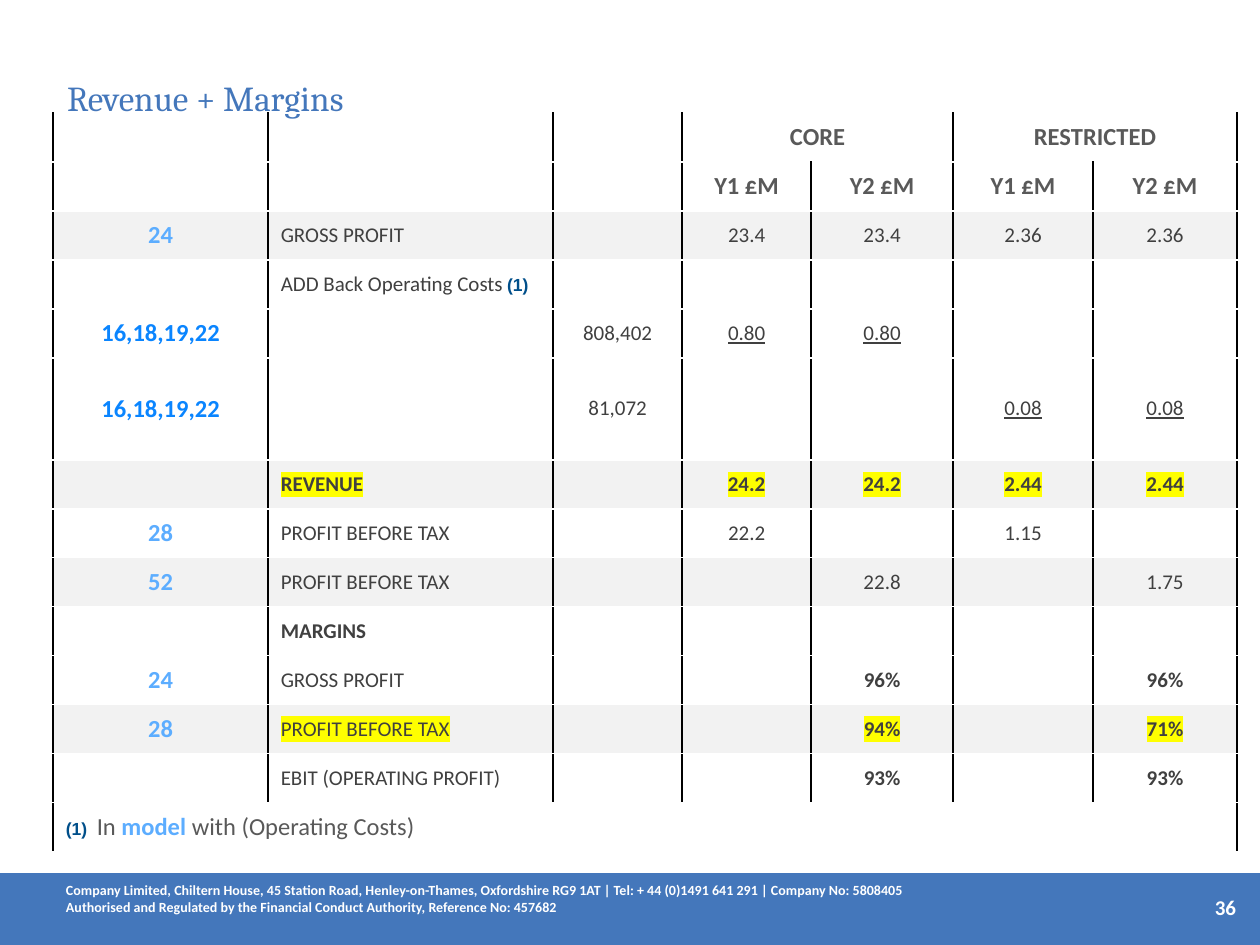
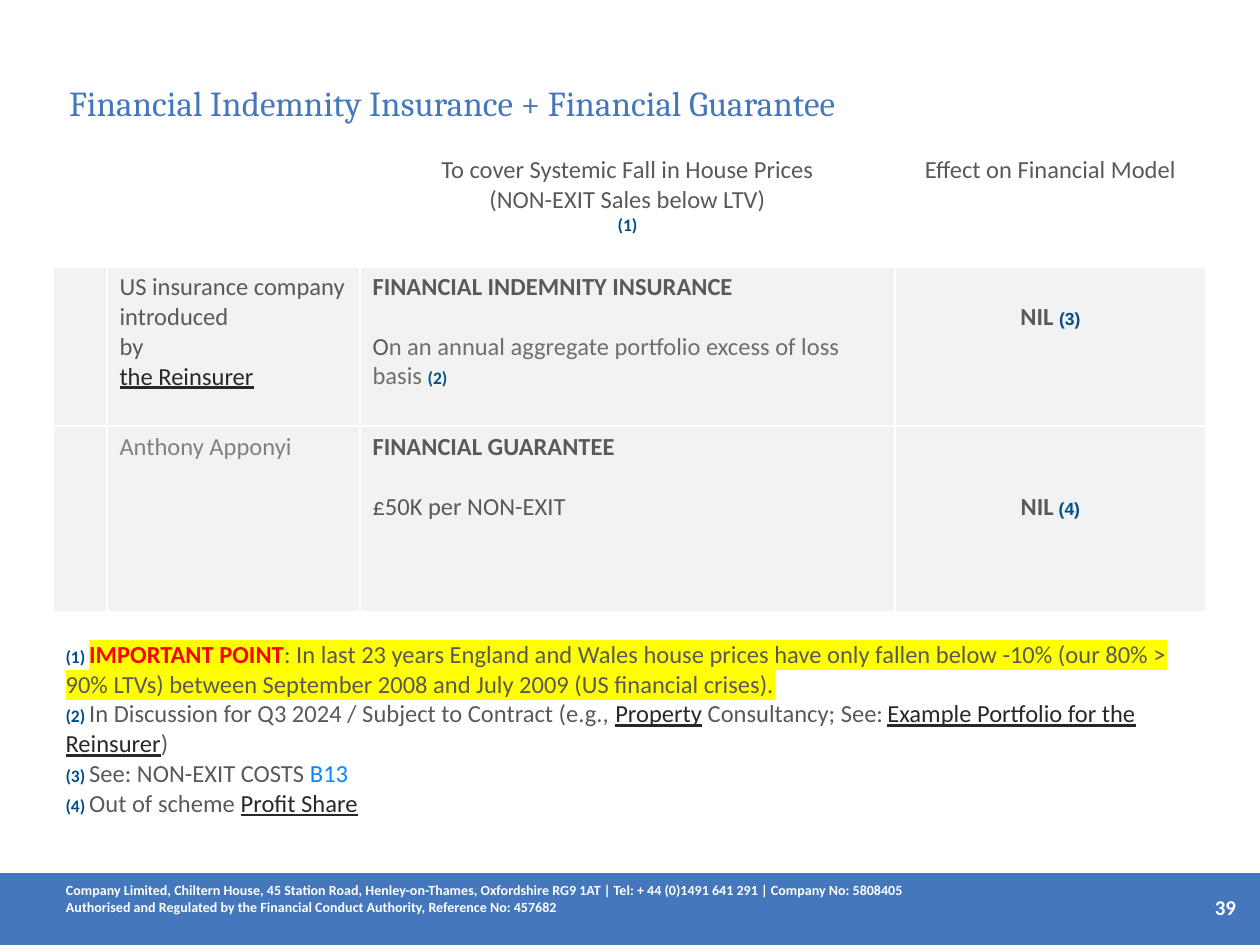
import dataclasses

import lxml.etree
import pptx
import pptx.dml.color
import pptx.enum.shapes
import pptx.enum.text
import pptx.oxml.ns
import pptx.util

ALIGN = pptx.enum.text.PP_ALIGN
ANCHOR = pptx.enum.text.MSO_ANCHOR
EMU_PER_PX = 914400 / 126


@dataclasses.dataclass(frozen=True)
class Style:
    size: int
    color: str
    bold: bool = False
    font: str = "Calibri"
    underline: bool = False
    highlight: str = ""


class Theme:
    blue = "4477BB"
    band = "F2F2F2"
    black = "000000"
    white = "FFFFFF"
    yellow = "FFFF00"
    gray = "595959"
    dark = "404040"
    link = "282828"
    navy = "004F8A"
    sky = "5CADFF"
    azure = "0A85FF"
    styles = {
        "title": Style(20, blue, font="Cambria"),
        "footer": Style(8, white, True),
        "page": Style(12, white, True),
        "head": Style(14, gray, True),
        "body": Style(14, gray),
        "light": Style(14, "6E6E6E"),
        "name": Style(14, "808080"),
        "link": Style(14, link, underline=True),
        "azure": Style(14, azure),
        "note": Style(10, navy, True),
        "note arial": Style(10, navy, True, "Arial"),
        "alert": Style(14, "FF0000", True, highlight=yellow),
        "marked body": Style(14, gray, highlight=yellow),
        "ref": Style(14, sky, True),
        "ref strong": Style(14, azure, True),
        "cell": Style(12, dark),
        "cell bold": Style(12, dark, True),
        "cell under": Style(12, dark, underline=True),
        "cell marked": Style(12, dark, highlight=yellow),
        "cell bold marked": Style(12, dark, True, highlight=yellow),
    }


FOOTER_LINES = (
    "Company Limited, Chiltern House, 45 Station Road, Henley-on-Thames, Oxfordshire RG9 1AT"
    " | Tel: + 44 (0)1491 641 291 | Company No: 5808405",
    "Authorised and Regulated by the Financial Conduct Authority, Reference No: 457682",
)

MARGIN_COLUMNS = (30, 215, 285, 129, 129, 142, 140, 144)
ROW_HEIGHT = 49
TALL_ROW, TALL_HEIGHT = 5, 102
HEADER_SPANS = ((0, 4, 5), (0, 6, 7), (13, 1, 7))
COSTS_LABEL = [("ADD Back Operating Costs", "cell"), (" ", "note"), ("(1)", "note arial")]
COSTS_FOOTNOTE = [("(1)  ", "note arial"), ("In ", "body"), ("model ", "ref"),
                  ("with (Operating Costs)", "body")]
MARGIN_ROWS = (
    (False, "ref", "cell", "head", ("", "", "", "CORE", "", "RESTRICTED", "")),
    (False, "ref", "cell", "head", ("", "", "", "Y1 £M", "Y2 £M", "Y1 £M", "Y2 £M")),
    (True, "ref", "cell", "cell", ("24", "GROSS PROFIT", "", "23.4", "23.4", "2.36", "2.36")),
    (False, "ref", "cell", "cell", ("", COSTS_LABEL, "", "", "", "", "")),
    (False, "ref strong", "cell", "cell under",
     ("16,18,19,22", "", [("808,402", "cell")], "0.80", "0.80", "", "")),
    (False, "ref strong", "cell", "cell under",
     ("16,18,19,22", "", [("81,072", "cell")], "", "", "0.08", "0.08")),
    (True, "ref", "cell bold marked", "cell bold marked",
     ("", "REVENUE", "", "24.2", "24.2", "2.44", "2.44")),
    (False, "ref", "cell", "cell", ("28", "PROFIT BEFORE TAX", "", "22.2", "", "1.15", "")),
    (True, "ref", "cell", "cell", ("52", "PROFIT BEFORE TAX", "", "", "22.8", "", "1.75")),
    (False, "ref", "cell bold", "cell", ("", "MARGINS", "", "", "", "", "")),
    (False, "ref", "cell", "cell bold", ("24", "GROSS PROFIT", "", "", "96%", "", "96%")),
    (True, "ref", "cell marked", "cell bold marked",
     ("28", "PROFIT BEFORE TAX", "", "", "94%", "", "71%")),
    (False, "ref", "cell", "cell bold",
     ("", "EBIT (OPERATING PROFIT)", "", "", "93%", "", "93%")),
    (False, "ref", "cell", "cell", (COSTS_FOOTNOTE, "", "", "", "", "", "")),
)

COVER_COLUMNS = (54, 253, 535, 311)
COVER_ROWS = (117, 160, 186, 258)
COVER_CELLS = {
    (0, 2): [[("To cover Systemic Fall in House Prices", "body")],
             [("(NON-EXIT Sales below LTV)", "body")],
             [("(1)", "note")]],
    (0, 3): [[("Effect on Financial Model", "body")]],
    (1, 1): [[("US insurance company introduced", "body")],
             [("by", "body")],
             [("the Reinsurer", "link")]],
    (1, 2): [[("FINANCIAL INDEMNITY INSURANCE", "head")],
             [("O", "body"), ("n an annual aggregate portfolio excess of loss basis ", "light"),
              ("(2)", "note")]],
    (1, 3): [[("NIL ", "head"), ("(3)", "note arial")]],
    (2, 1): [[("Anthony Apponyi", "name")]],
    (2, 2): [[("FINANCIAL GUARANTEE", "head")],
             [("£50K per NON-EXIT", "body")]],
    (2, 3): [[("NIL", "head"), (" ", "note arial"), ("(4)", "note arial")]],
    (3, 0): [
        [("(1) ", "note"), ("IMPORTANT POINT", "alert"),
         (": In last 23 years England and Wales house prices have only fallen below -10% "
          "(our 80% > 90% LTVs) between September 2008 and July 2009 (US financial crises).",
          "marked body")],
        [("(2) ", "note"),
         ("In Discussion for Q3 2024 / Subject to Contract (e.g., ", "body"),
         ("Property", "link"), (" Consultancy; See:", "body"), (" ", "note"),
         ("Example Portfolio for the Reinsurer", "link"), (")", "body")],
        [("(3) ", "note"), ("See: NON-EXIT COSTS ", "body"), ("B13", "azure")],
        [("(4) ", "note"), ("Out of scheme ", "body"), ("Profit Share", "link")],
    ],
}
COVER_CENTERED = {(0, 2), (0, 3), (1, 3), (2, 3)}
COVER_TOP_MARGINS = {(1, 3): 36, (2, 3): 66, (3, 0): 28}
COVER_SPACED = {(1, 2), (2, 2)}
PARAGRAPH_GAP = 17


def px(length):
    return pptx.util.Emu(round(length * EMU_PER_PX))


def rgb(color):
    return pptx.dml.color.RGBColor.from_string(color)


def format_run(span, style):
    font = span.font
    font.size = pptx.util.Pt(style.size)
    font.name = style.font
    font.bold = style.bold
    font.underline = style.underline
    font.color.rgb = rgb(style.color)
    if style.highlight:
        highlight = lxml.etree.Element(pptx.oxml.ns.qn("a:highlight"))
        lxml.etree.SubElement(highlight, pptx.oxml.ns.qn("a:srgbClr"), val=style.highlight)
        span._r.rPr.find(pptx.oxml.ns.qn("a:solidFill")).addnext(highlight)


def write(frame, paragraphs, align=ALIGN.LEFT, gap=0):
    for index, runs in enumerate(paragraphs):
        para = frame.paragraphs[0] if index == 0 else frame.add_paragraph()
        para.alignment = align
        if index and gap:
            para.space_before = pptx.util.Pt(gap)
        for text, style_name in runs:
            span = para.add_run()
            span.text = text
            format_run(span, Theme.styles[style_name])


def clear_margins(frame):
    frame.margin_left = frame.margin_top = frame.margin_right = frame.margin_bottom = 0
    frame.word_wrap = True


def add_text(page, bounds, paragraphs, align=ALIGN.LEFT, anchor=ANCHOR.TOP):
    box = page.shapes.add_textbox(*map(px, bounds))
    clear_margins(box.text_frame)
    box.text_frame.vertical_anchor = anchor
    write(box.text_frame, paragraphs, align)


def add_page(deck, title, number, title_bounds):
    page = deck.slides.add_slide(deck.slide_layouts[5])
    heading = page.shapes.title
    heading.left, heading.top, heading.width, heading.height = map(px, title_bounds)
    frame = heading.text_frame
    clear_margins(frame)
    frame.auto_size = pptx.enum.text.MSO_AUTO_SIZE.NONE
    frame.vertical_anchor = ANCHOR.TOP
    write(frame, [[(title, "title")]])

    band = page.shapes.add_shape(pptx.enum.shapes.MSO_SHAPE.RECTANGLE,
                                 *map(px, (0, 873, 1260, 72)))
    band.shadow.inherit = False
    band.fill.solid()
    band.fill.fore_color.rgb = rgb(Theme.blue)
    band.line.fill.background()
    add_text(page, (1177, 895, 59, 25), [[(number, "page")]], ALIGN.RIGHT, ANCHOR.MIDDLE)
    add_text(page, (66, 882, 1128, 34), [[(line, "footer")] for line in FOOTER_LINES])
    return page


def add_grid(page, left, top, columns, rows):
    frame = page.shapes.add_table(len(rows), len(columns), px(left), px(top),
                                  px(sum(columns)), px(sum(rows)))
    table = frame.table
    table.first_row = table.horz_banding = False
    for column, width in zip(table.columns, columns):
        column.width = px(width)
    for row, height in zip(table.rows, rows):
        row.height = px(height)
    return table


def fill_cell(cell, banded):
    if banded:
        cell.fill.solid()
        cell.fill.fore_color.rgb = rgb(Theme.band)
    else:
        cell.fill.background()


def set_borders(cell, color, sides):
    properties = cell._tc.get_or_add_tcPr()
    for index, (side, points) in enumerate(sides):
        line = lxml.etree.Element(pptx.oxml.ns.qn("a:ln" + side),
                                  w=str(pptx.util.Pt(points)))
        fill = lxml.etree.SubElement(line, pptx.oxml.ns.qn("a:solidFill"))
        lxml.etree.SubElement(fill, pptx.oxml.ns.qn("a:srgbClr"), val=color)
        properties.insert(index, line)


def add_margins_page(deck):
    page = add_page(deck, "Revenue + Margins", "36", (67, 76, 1071, 55))
    heights = [TALL_HEIGHT if index == TALL_ROW else ROW_HEIGHT
               for index in range(len(MARGIN_ROWS))]
    table = add_grid(page, 23, 113, MARGIN_COLUMNS, heights)
    for row, first, last in HEADER_SPANS:
        table.cell(row, first).merge(table.cell(row, last))
    for row, (banded, ref, label, value, texts) in enumerate(MARGIN_ROWS):
        style_names = (ref, label) + (value,) * 5
        for column in range(len(MARGIN_COLUMNS)):
            cell = table.cell(row, column)
            cell.margin_top = cell.margin_bottom = 0
            cell.vertical_anchor = ANCHOR.MIDDLE
            fill_cell(cell, banded and column > 0)
            sides = [("R", 1)]
            if column and not cell.is_spanned:
                sides.insert(0, ("L", 1))
            set_borders(cell, Theme.black, sides)
            content = texts[column - 1] if column else ""
            if content:
                runs = ([(content, style_names[column - 1])]
                        if isinstance(content, str) else content)
                to_left = column == 2 or content is COSTS_FOOTNOTE
                write(cell.text_frame, [runs], ALIGN.LEFT if to_left else ALIGN.CENTER)


def add_cover_page(deck):
    page = add_page(deck, "Financial Indemnity Insurance + Financial Guarantee", "39",
                    (69, 81, 1071, 43))
    table = add_grid(page, 53, 149, COVER_COLUMNS, COVER_ROWS)
    table.cell(3, 0).merge(table.cell(3, 3))
    for row in range(len(COVER_ROWS)):
        for column in range(len(COVER_COLUMNS)):
            cell, place = table.cell(row, column), (row, column)
            fill_cell(cell, row in (1, 2))
            set_borders(cell, Theme.white,
                        [("L", 1), ("R", 1), ("T", 1), ("B", 1 if row else 3)])
            if place in COVER_TOP_MARGINS:
                cell.margin_top = px(COVER_TOP_MARGINS[place])
            write(cell.text_frame, COVER_CELLS.get(place, []),
                  ALIGN.CENTER if place in COVER_CENTERED else ALIGN.LEFT,
                  PARAGRAPH_GAP if place in COVER_SPACED else 0)


def main():
    deck = pptx.Presentation()
    deck.slide_width, deck.slide_height = px(1260), px(945)
    add_margins_page(deck)
    add_cover_page(deck)
    deck.save("out.pptx")


if __name__ == "__main__":
    main()
